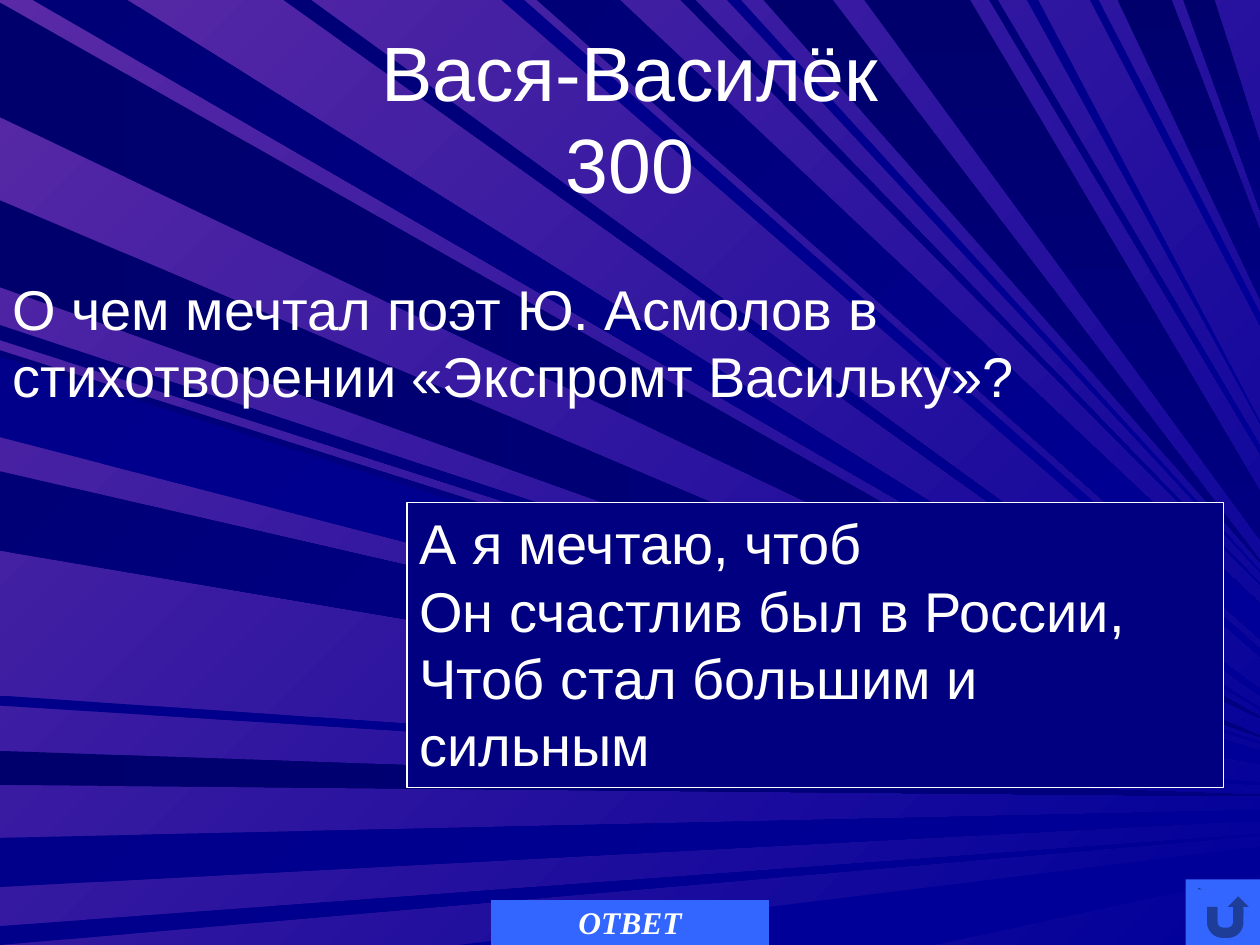
from collections import namedtuple

from pptx import Presentation
from pptx.dml.color import RGBColor
from pptx.enum.shapes import MSO_SHAPE
from pptx.enum.text import MSO_ANCHOR, MSO_AUTO_SIZE, PP_ALIGN
from pptx.util import Pt

PX = 9144
WHITE, NAVY, BLUE, BUTTON = "FFFFFF", "000080", "000099", "3366FF"

Box = namedtuple("Box", "left top width height")
Shade = namedtuple("Shade", "start end")
Ray = namedtuple("Ray", "edge shade near far tip spread", defaults=(1,))

DARK = Shade("00006D", NAVY)
DEEP = Shade("000076", BLUE)
PALE = Shade("00008A", BLUE)
FLAT = Shade(BLUE, BLUE)

RAYS = [
    Ray("left", DARK, 2, 93, 569),
    Ray("top", DEEP, 101, 26, 562),
    Ray("left", DARK, 596, 623, 631),
    Ray("left", PALE, 665, 704, 643, 8),
    Ray("left", PALE, 735, 750, 662),
    Ray("bottom", FLAT, 364, 742, 672, 22),
    Ray("left", DEEP, 258, 270, 589),
    Ray("left", DARK, 159, 228, 584),
    Ray("top", PALE, 416, 398, 515, 6),
    Ray("top", DEEP, 492, 426, 479, 28),
    Ray("top", DEEP, 552, 540, 463),
    Ray("top", DARK, 661, 606, 445),
    Ray("top", DARK, 930, 887, 183, 54),
    Ray("top", DARK, 964, 939, 114, 53),
    Ray("left", DEEP, 278, 342, 596, 6),
    Ray("left", DEEP, 374, 437, 605),
    Ray("left", PALE, 552, 560, 621, 2),
    Ray("top", DEEP, 247, 225, 547, 5),
    Ray("top", PALE, 588, 577, 453),
    Ray("top", DARK, 770, 686, 390, 38),
    Ray("top", DEEP, 792, 785, 354, 6),
    Ray("top", PALE, 824, 815, 335),
    Ray("top", PALE, 872, 865, 249, 9),
    Ray("left", PALE, 283, 347, 601, 5),
]


def color(value):
    return RGBColor.from_string(value)


def place(box):
    return [length * PX for length in box]


def apply(target, values):
    for name, value in values.items():
        setattr(target, name, value)


def paint(fill, start, end, angle):
    fill.gradient()
    fill.gradient_angle = (360 - angle) % 360
    for stop, value in zip(fill.gradient_stops, (start, end)):
        stop.color.rgb = color(value)


def write(shape, lines, font, frame, alignment=PP_ALIGN.LEFT):
    text_frame = shape.text_frame
    apply(text_frame, {"text": "\n".join(lines), "word_wrap": True, **frame})
    for paragraph in text_frame.paragraphs:
        paragraph.alignment = alignment
        apply(paragraph.font, font)
        paragraph.font.color.rgb = color(WHITE)


def add_plain_shape(slide, kind, box, fill):
    shape = slide.shapes.add_shape(kind, *place(box))
    shape.shadow.inherit = False
    shape.fill.solid()
    shape.fill.fore_color.rgb = color(fill)
    shape.line.fill.background()
    return shape


def edge_point(box, edge, offset):
    if edge == "left":
        return box.left, box.top + offset
    return box.left + offset, box.top + (box.height if edge == "bottom" else 0)


def ray_angle(ray):
    if ray.shade.end == BLUE:
        return 45
    return 90 if ray.edge == "top" else 0


def add_ray(slide, box, ray):
    right, tip = box.left + box.width, box.top + ray.tip
    builder = slide.shapes.build_freeform(*edge_point(box, ray.edge, ray.near), scale=PX)
    builder.add_line_segments(
        [(right, tip), (right, tip + ray.spread), edge_point(box, ray.edge, ray.far)], close=True)
    shape = builder.convert_to_shape()
    shape.shadow.inherit = False
    shape.line.fill.background()
    paint(shape.fill, *ray.shade, ray_angle(ray))


def add_background(slide, box):
    paint(slide.background.fill, "5A2AA6", BLUE, 45)
    for ray in RAYS:
        add_ray(slide, box, ray)


def add_title(slide, box):
    title = slide.shapes.add_textbox(*place(box))
    write(title, ["Вася-Василёк\v300"], {"name": "Arial", "size": Pt(44)},
          {"vertical_anchor": MSO_ANCHOR.MIDDLE}, PP_ALIGN.CENTER)


BODY_FONT = {"name": "Arial", "size": Pt(32)}
BODY_FRAME = {"vertical_anchor": MSO_ANCHOR.TOP, "auto_size": MSO_AUTO_SIZE.SHAPE_TO_FIT_TEXT}


def add_question(slide, box):
    question = slide.shapes.add_textbox(*place(box))
    write(question, ["О чем мечтал поэт Ю. Асмолов в стихотворении «Экспромт Васильку»?"],
          BODY_FONT, BODY_FRAME)


def add_answer(slide, box):
    answer = add_plain_shape(slide, MSO_SHAPE.RECTANGLE, box, NAVY)
    answer.line.color.rgb = color(WHITE)
    answer.line.width = Pt(0.75)
    write(answer, ["А я мечтаю, чтоб", "Он счастлив был в России,", "Чтоб стал большим и сильным"],
          BODY_FONT, BODY_FRAME)


def add_navigation(slide, box):
    right, bottom = box.left + box.width, box.top + box.height

    def add_button(kind, left, width, height):
        return add_plain_shape(slide, kind, Box(left, bottom - height, width, height), BUTTON)

    add_button(MSO_SHAPE.ACTION_BUTTON_FORWARD_OR_NEXT, right - 59, 59, 52)
    answer_button = add_button(MSO_SHAPE.ACTION_BUTTON_CUSTOM, box.left + 390, 220, 36)
    write(answer_button, ["ОТВЕТ"],
          {"name": "Times New Roman", "size": Pt(18), "bold": True, "italic": True},
          {"vertical_anchor": MSO_ANCHOR.MIDDLE, "word_wrap": False}, PP_ALIGN.CENTER)
    add_button(MSO_SHAPE.ACTION_BUTTON_RETURN, right - 51, 51, 44)


def main():
    presentation = Presentation()
    apply(presentation, {"slide_width": 1000 * PX, "slide_height": 750 * PX})
    slide = presentation.slides.add_slide(presentation.slide_layouts[6])
    add_background(slide, Box(0, 0, 1000, 750))
    add_title(slide, Box(50, 30, 900, 125))
    add_answer(slide, Box(323, 399, 648, 226))
    add_question(slide, Box(0, 213, 1000, 172))
    add_navigation(slide, Box(0, 698, 1000, 52))
    presentation.save("out.pptx")


if __name__ == "__main__":
    main()
